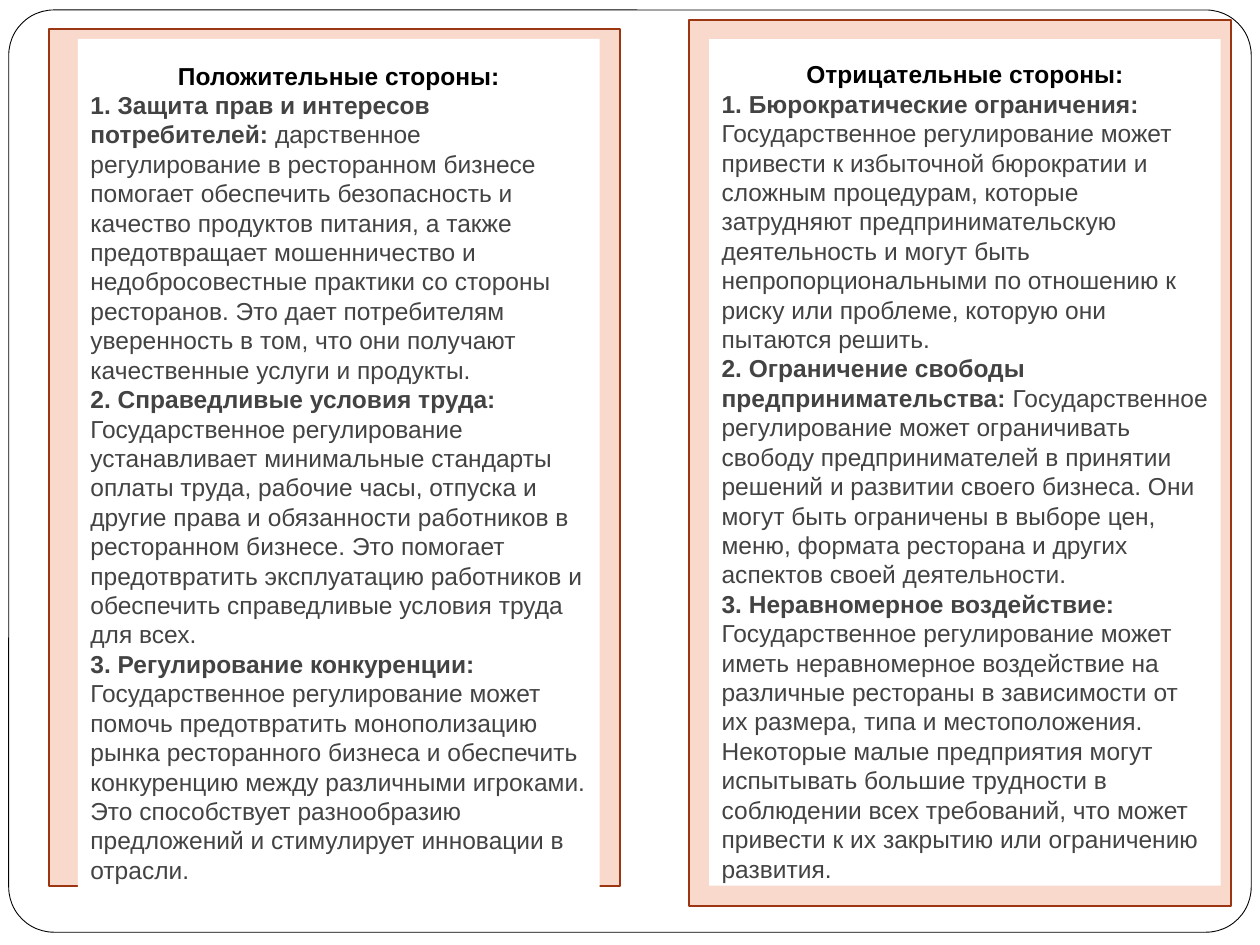
import pptx
import pptx.dml.color
import pptx.enum.shapes
import pptx.enum.text
import pptx.util

Pt = pptx.util.Pt
RGBColor = pptx.dml.color.RGBColor
MSO_SHAPE = pptx.enum.shapes.MSO_SHAPE
PP_ALIGN = pptx.enum.text.PP_ALIGN

WHITE = RGBColor(0xFF, 0xFF, 0xFF)
BLACK = RGBColor(0x00, 0x00, 0x00)
PEACH = RGBColor(0xFA, 0xD9, 0xCD)
RUST = RGBColor(0x9C, 0x35, 0x11)
GRAY = RGBColor(0x43, 0x43, 0x43)
FONT_NAME = "Arial"
FONT_SIZE = 14

POSITIVE_SIDES = [
    ("1. Защита прав и интересов потребителей: ",
     "дарственное регулирование в ресторанном бизнесе помогает обеспечить "
     "безопасность и качество продуктов питания, а также предотвращает "
     "мошенничество и недобросовестные практики со стороны ресторанов. Это "
     "дает потребителям уверенность в том, что они получают качественные "
     "услуги и продукты."),
    ("2. Справедливые условия труда: ",
     "Государственное регулирование устанавливает минимальные стандарты "
     "оплаты труда, рабочие часы, отпуска и другие права и обязанности "
     "работников в ресторанном бизнесе. Это помогает предотвратить "
     "эксплуатацию работников и обеспечить справедливые условия труда для "
     "всех."),
    ("3. Регулирование конкуренции: ",
     "Государственное регулирование может помочь предотвратить "
     "монополизацию рынка ресторанного бизнеса и обеспечить конкуренцию "
     "между различными игроками. Это способствует разнообразию предложений "
     "и стимулирует инновации в отрасли."),
]
NEGATIVE_SIDES = [
    ("1. Бюрократические ограничения: ",
     "Государственное регулирование может привести к избыточной бюрократии "
     "и сложным процедурам, которые затрудняют предпринимательскую "
     "деятельность и могут быть непропорциональными по отношению к риску "
     "или проблеме, которую они пытаются решить."),
    ("2. Ограничение свободы предпринимательства: ",
     "Государственное регулирование может ограничивать свободу "
     "предпринимателей в принятии решений и развитии своего бизнеса. Они "
     "могут быть ограничены в выборе цен, меню, формата ресторана и других "
     "аспектов своей деятельности."),
    ("3. Неравномерное воздействие: ",
     "Государственное регулирование может иметь неравномерное воздействие "
     "на различные рестораны в зависимости от их размера, типа и "
     "местоположения. Некоторые малые предприятия могут испытывать большие "
     "трудности в соблюдении всех требований, что может привести к их "
     "закрытию или ограничению развития."),
]


def add_box(slide, kind, box, fill, line=None, line_width=1):
    """Add a flat filled shape at box (left, top, width, height) in points."""
    shape = slide.shapes.add_shape(kind, *(Pt(length) for length in box))
    shape.shadow.inherit = False
    shape.fill.solid()
    shape.fill.fore_color.rgb = fill
    if line is None:
        shape.line.fill.background()
    else:
        shape.line.color.rgb = line
        shape.line.width = Pt(line_width)
    return shape


def add_run(paragraph, text, color, bold):
    """Append one formatted run to the paragraph."""
    run = paragraph.add_run()
    run.text = text
    run.font.name = FONT_NAME
    run.font.size = Pt(FONT_SIZE)
    run.font.bold = bold
    run.font.color.rgb = color


def add_frame(slide, box):
    """Draw the rounded border around the slide."""
    frame = add_box(slide, MSO_SHAPE.ROUNDED_RECTANGLE, box, WHITE, BLACK, 0.5)
    frame.adjustments[0] = 0.049


def add_panel(slide, box, text_offset, text_size, heading, points):
    """Draw a tinted panel with a white text card placed inside it."""
    add_box(slide, MSO_SHAPE.RECTANGLE, box, PEACH, RUST)
    card_box = (box[0] + text_offset[0], box[1] + text_offset[1], *text_size)
    card = add_box(slide, MSO_SHAPE.RECTANGLE, card_box, WHITE)
    text_frame = card.text_frame
    text_frame.word_wrap = True
    text_frame.auto_size = pptx.enum.text.MSO_AUTO_SIZE.SHAPE_TO_FIT_TEXT
    text_frame.vertical_anchor = pptx.enum.text.MSO_ANCHOR.MIDDLE
    text_frame.margin_left = text_frame.margin_right = Pt(7.2)
    text_frame.margin_top = Pt(10)
    text_frame.margin_bottom = Pt(0)

    paragraph = text_frame.paragraphs[0]
    paragraph.alignment = PP_ALIGN.CENTER
    add_run(paragraph, heading, BLACK, True)
    for label, explanation in points:
        paragraph = text_frame.add_paragraph()
        paragraph.alignment = PP_ALIGN.LEFT
        add_run(paragraph, label, GRAY, True)
        add_run(paragraph, explanation, GRAY, False)


def main():
    """Build the comparison slide and save it."""
    presentation = pptx.Presentation()
    presentation.slide_width = Pt(720)
    presentation.slide_height = Pt(540)
    slide = presentation.slides.add_slide(presentation.slide_layouts[6])
    add_frame(slide, (5, 5.7, 710, 527))
    add_panel(slide, (28, 16.6, 326.2, 489.6), (16.6, 5.7), (298.1, 485.3),
              "Положительные стороны:", POSITIVE_SIDES)
    add_panel(slide, (393.8, 11.5, 309.6, 506.2), (11.5, 10.8), (292.3, 483.8),
              "Отрицательные стороны:", NEGATIVE_SIDES)
    presentation.save("out.pptx")


if __name__ == "__main__":
    main()
